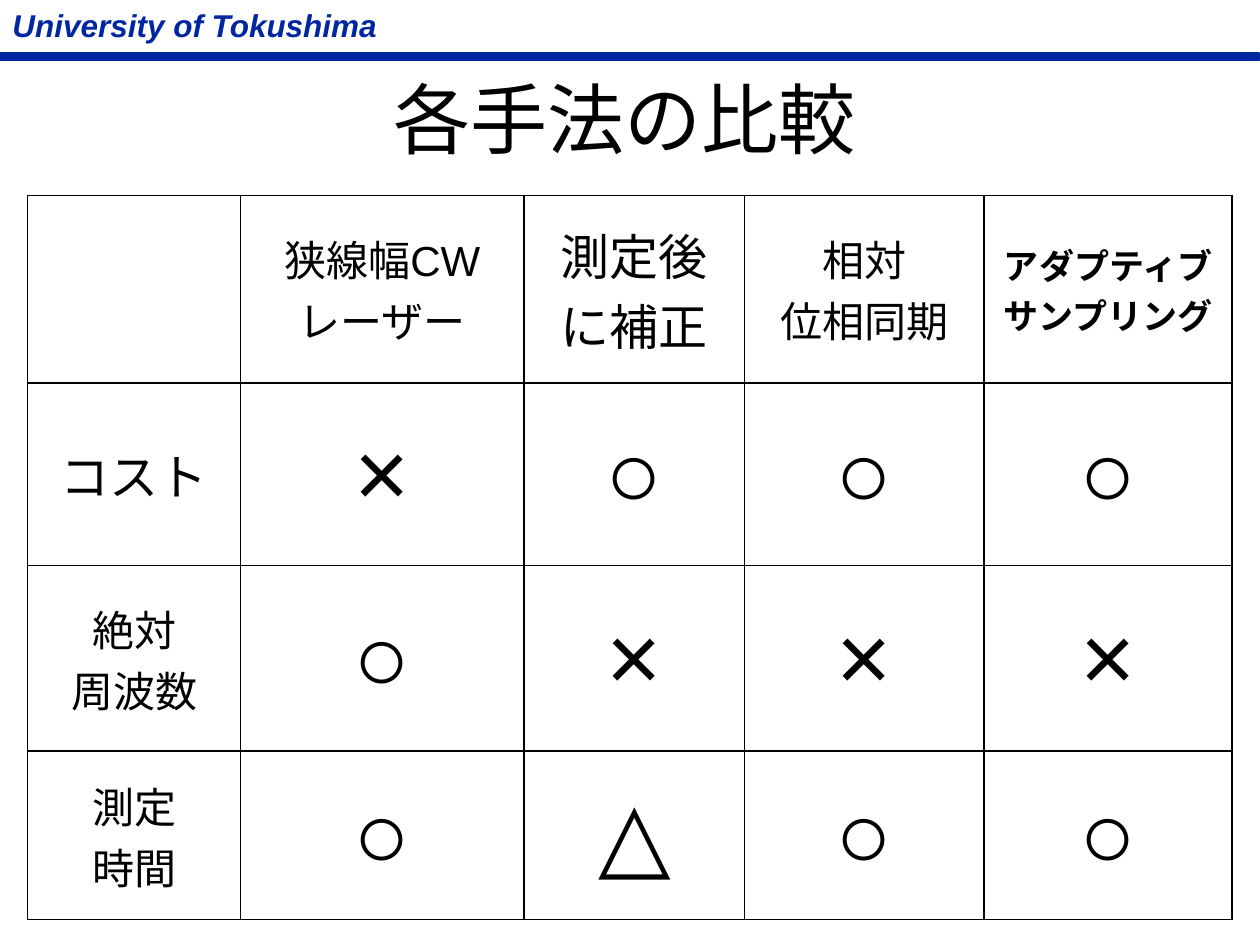
from lxml.etree import SubElement
from pptx import Presentation
from pptx.dml.color import RGBColor
from pptx.enum.lang import MSO_LANGUAGE_ID
from pptx.enum.shapes import MSO_SHAPE
from pptx.enum.text import MSO_ANCHOR, PP_ALIGN
from pptx.oxml.ns import qn
from pptx.util import Inches, Pt

BLUE = RGBColor(0x00, 0x27, 0x9F)
BLACK = RGBColor(0, 0, 0)
WHITE = RGBColor(0xFF, 0xFF, 0xFF)

# Content: (text, size) per header cell, then a label and marks per row
HEADER = [("", 24), ("狭線幅CWレーザー", 24), ("測定後に補正", 28),
          ("相対\n位相同期", 24), ("アダプティブサンプリング", 20)]
ROWS = [(("コスト", 28), "×○○○"),
        (("絶対\n周波数", 24), "○×××"),
        (("測定\n時間", 24), "○△○○")]
COL_WIDTHS = [1.69, 2.25, 1.75, 1.9, 1.97]
ROW_HEIGHTS = [1.49, 1.45, 1.47, 1.34]
MARK_SIZE = 54
WHITE_COL = 2
BOLD_COL = 4


def write(tf, text, size, color=BLACK, bold=False, italic=False,
          align=PP_ALIGN.CENTER, lang=MSO_LANGUAGE_ID.JAPANESE):
    for i, line in enumerate(text.split("\n")):
        p = tf.paragraphs[0] if i == 0 else tf.add_paragraph()
        p.alignment = align
        r = p.add_run()
        r.text = line
        f = r.font
        f.name, f.size, f.bold, f.italic = "Arial", Pt(size), bold, italic
        f.color.rgb = color
        f.language_id = lang


def set_borders(cell):
    pr = cell._tc.get_or_add_tcPr()
    for i, side in enumerate(("lnL", "lnR", "lnT", "lnB")):
        ln = pr.makeelement(qn(f"a:{side}"), {"w": str(Pt(1))})
        fill = SubElement(ln, qn("a:solidFill"))
        SubElement(fill, qn("a:srgbClr"), val=str(BLACK))
        pr.insert(i, ln)


prs = Presentation()
prs.slide_width, prs.slide_height = Inches(10), Inches(7.5)
s = prs.slides.add_slide(prs.slide_layouts[6])

# Header rule and university name
bar = s.shapes.add_shape(MSO_SHAPE.RECTANGLE, 0, Inches(0.42), Inches(9.99), Inches(0.06))
bar.shadow.inherit = False
bar.fill.solid()
bar.fill.fore_color.rgb = BLUE
bar.line.color.rgb = BLUE
bar.line.width = Pt(1)

name = s.shapes.add_textbox(0, 0, Inches(3.12), Inches(0.4))
name.text_frame.word_wrap = False
write(name.text_frame, "University of Tokushima", 18, color=BLUE, bold=True,
      italic=True, align=PP_ALIGN.LEFT, lang=MSO_LANGUAGE_ID.ENGLISH_US)

# Title
title = s.shapes.add_textbox(Inches(0.46), Inches(0.47), Inches(9), Inches(0.93))
title.text_frame.word_wrap = True
title.text_frame.vertical_anchor = MSO_ANCHOR.MIDDLE
write(title.text_frame, "各手法の比較", 44)

# Comparison table
grid = [HEADER] + [[label] + [(m, MARK_SIZE) for m in marks] for label, marks in ROWS]
table = s.shapes.add_table(len(grid), len(HEADER), Inches(0.22), Inches(1.55),
                           Inches(sum(COL_WIDTHS)), Inches(sum(ROW_HEIGHTS))).table
table.first_row = table.horz_banding = False
for col, w in zip(table.columns, COL_WIDTHS):
    col.width = Inches(w)
for row, h in zip(table.rows, ROW_HEIGHTS):
    row.height = Inches(h)

for i, cells in enumerate(grid):
    for j, (text, size) in enumerate(cells):
        cell = table.cell(i, j)
        cell.vertical_anchor = MSO_ANCHOR.MIDDLE
        cell.margin_left = cell.margin_right = Inches(0.13)
        cell.margin_top = cell.margin_bottom = Inches(0.07)
        if j == WHITE_COL:
            cell.fill.solid()
            cell.fill.fore_color.rgb = WHITE
        else:
            cell.fill.background()
        set_borders(cell)
        if text:
            write(cell.text_frame, text, size, bold=(i == 0 and j == BOLD_COL))

prs.save("out.pptx")
